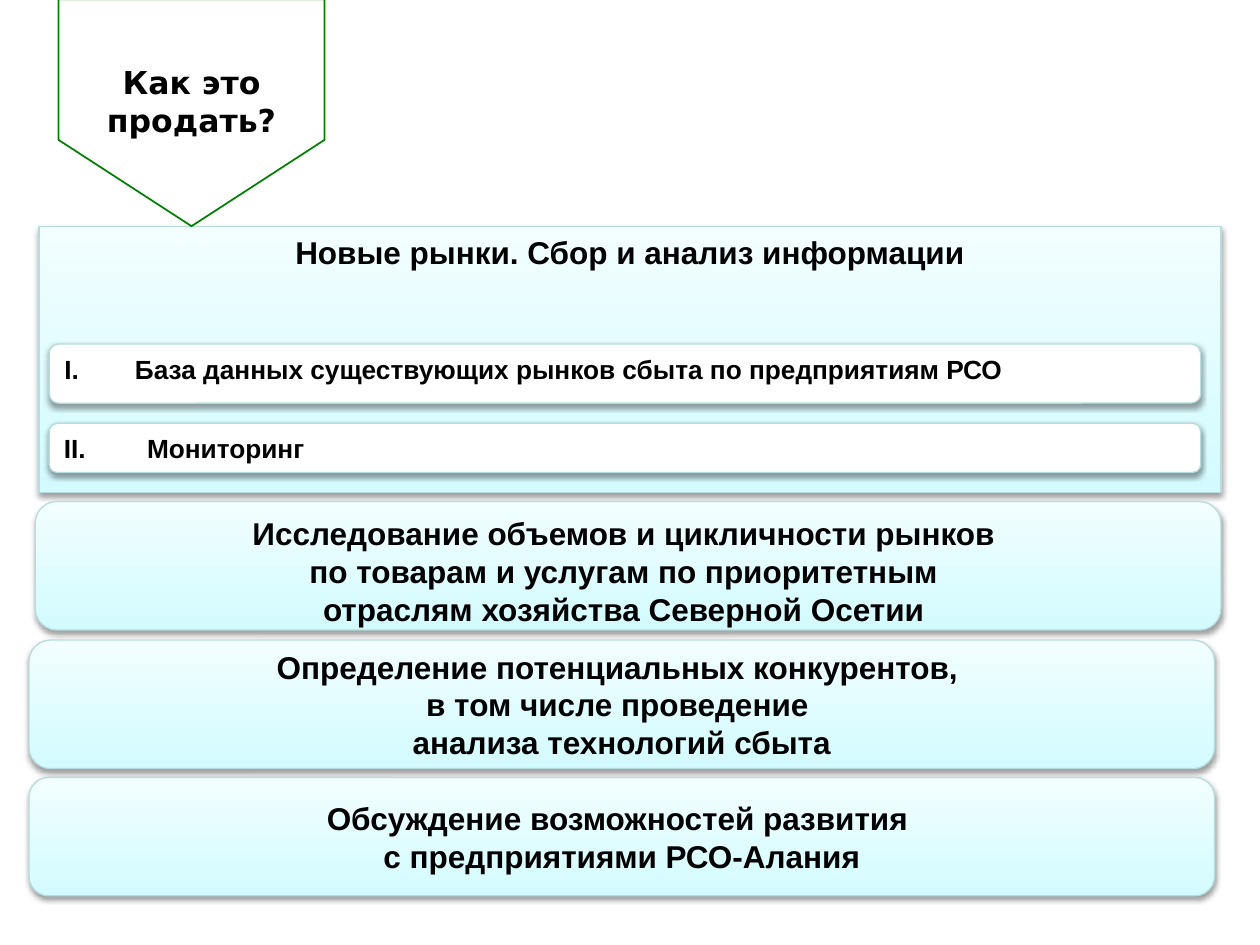
"""Build the slide on how to sell: new markets, research, competitors and discussion."""
from lxml import etree
from pptx import Presentation
from pptx import util as u
from pptx.dml.color import RGBColor
from pptx.enum import shapes, text
from pptx.oxml.ns import qn

COLORS = {"ink": "000000", "white": "FFFFFF", "edge": "B6DCDF", "arrow": "008000",
          "deep": "D3FBFF", "pale": "F2FEFF"}
TOP, MIDDLE = text.MSO_ANCHOR.TOP, text.MSO_ANCHOR.MIDDLE
LEFT, CENTER = text.PP_ALIGN.LEFT, text.PP_ALIGN.CENTER

prs = Presentation()
prs.slide_width, prs.slide_height = u.Inches(10), u.Inches(7.5)
COL, ROW = prs.slide_width / 100, prs.slide_height / 100
s = prs.slides.add_slide(prs.slide_layouts[5])


def rgb(name):
    return RGBColor.from_string(COLORS[name])


def style(sp, box, words, size, edge, width, align, frame, face="Arial"):
    x, y, w, h = box
    place = {"left": x * COL, "top": y * ROW, "width": w * COL, "height": h * ROW}
    for key, value in place.items():
        setattr(sp, key, round(value))
    sp.line.color.rgb = rgb(edge)
    sp.line.width = u.Pt(width)
    sp.shadow.inherit = False
    tf = sp.text_frame
    for key, value in {"auto_size": text.MSO_AUTO_SIZE.NONE, **frame}.items():
        setattr(tf, key, value)
    p = tf.paragraphs[0]
    p.text = words
    p.alignment = align
    for r in p.runs:
        for key, value in {"size": u.Pt(size), "name": face, "bold": True}.items():
            setattr(r.font, key, value)
        r.font.color.rgb = rgb("ink")
    return p


def add_shadow(sp):
    effects = sp.element.spPr.find(qn("a:effectLst"))
    shadow = etree.SubElement(effects, qn("a:outerShdw"), blurRad="40000", dist="20000",
                              dir="5400000", rotWithShape="0")
    color = etree.SubElement(shadow, qn("a:srgbClr"), val=COLORS["ink"])
    etree.SubElement(color, qn("a:alpha"), val="38000")


panels = [
    ((3.1, 24, 93.8, 28.13), "Новые рынки. Сбор и анализ информации", TOP, True),
    ((2.8, 53.07, 94.1, 13.6), "Исследование объемов и цикличности рынков \n"
     "по товарам и услугам по приоритетным \nотраслям хозяйства Северной Осетии ", TOP, False),
    ((2.3, 67.73, 94.1, 13.6), "Определение потенциальных конкурентов, \n"
     "в том числе проведение \nанализа технологий сбыта", MIDDLE, False),
    ((2.3, 82.27, 94.1, 12.53), "Обсуждение возможностей развития \n"
     "с предприятиями РСО-Алания", MIDDLE, False),
]
for box, words, anchor, is_title in panels:
    sp = s.shapes.title if is_title else s.shapes.add_shape(
        shapes.MSO_SHAPE.ROUNDED_RECTANGLE, 0, 0, 0, 0)
    style(sp, box, words, 18, "edge", 0.75, CENTER,
          {"vertical_anchor": anchor, "word_wrap": is_title})
    sp.fill.gradient()
    sp.fill.gradient_angle = 90
    for stop, name, position in zip(sp.fill.gradient_stops, ("deep", "pale"), (0, 1)):
        stop.color.rgb = rgb(name)
        stop.position = position
    add_shadow(sp)

items = [
    (36.4, 6.27, "База данных существующих рынков сбыта по предприятиям РСО", 0.56, 3),
    (44.8, 5.2, "Мониторинг", 0.66, 0),
]
for number, (y, h, words, indent, before) in enumerate(items, 1):
    sp = s.shapes.add_shape(shapes.MSO_SHAPE.ROUNDED_RECTANGLE, 0, 0, 0, 0)
    p = style(sp, (3.9, y, 91.4, h), words, 15, "edge", 0.75, LEFT,
              {"vertical_anchor": TOP, "word_wrap": True})
    sp.fill.solid()
    sp.fill.fore_color.rgb = rgb("white")
    add_shadow(sp)
    p.space_before = u.Pt(before)
    pPr = p._p.get_or_add_pPr()
    pPr.set("marL", str(u.Inches(indent)))
    pPr.set("indent", str(-u.Inches(indent)))
    etree.SubElement(pPr, qn("a:buAutoNum"), type="romanUcPeriod", startAt=str(number))

sp = s.shapes.add_shape(shapes.MSO_SHAPE.PENTAGON, 0, 0, 0, 0)
style(sp, (6.2, -2.13, 18, 28.13), "Как это продать?", 18, "arrow", 1, CENTER,
      {"vertical_anchor": MIDDLE, "word_wrap": True, "margin_left": u.Inches(0.2)},
      "DejaVu Sans")
sp.rotation = 90
sp.adjustments[0] = 0.38
sp.fill.background()
sp.element.txBody.bodyPr.set("vert", "vert270")

prs.save("out.pptx")
